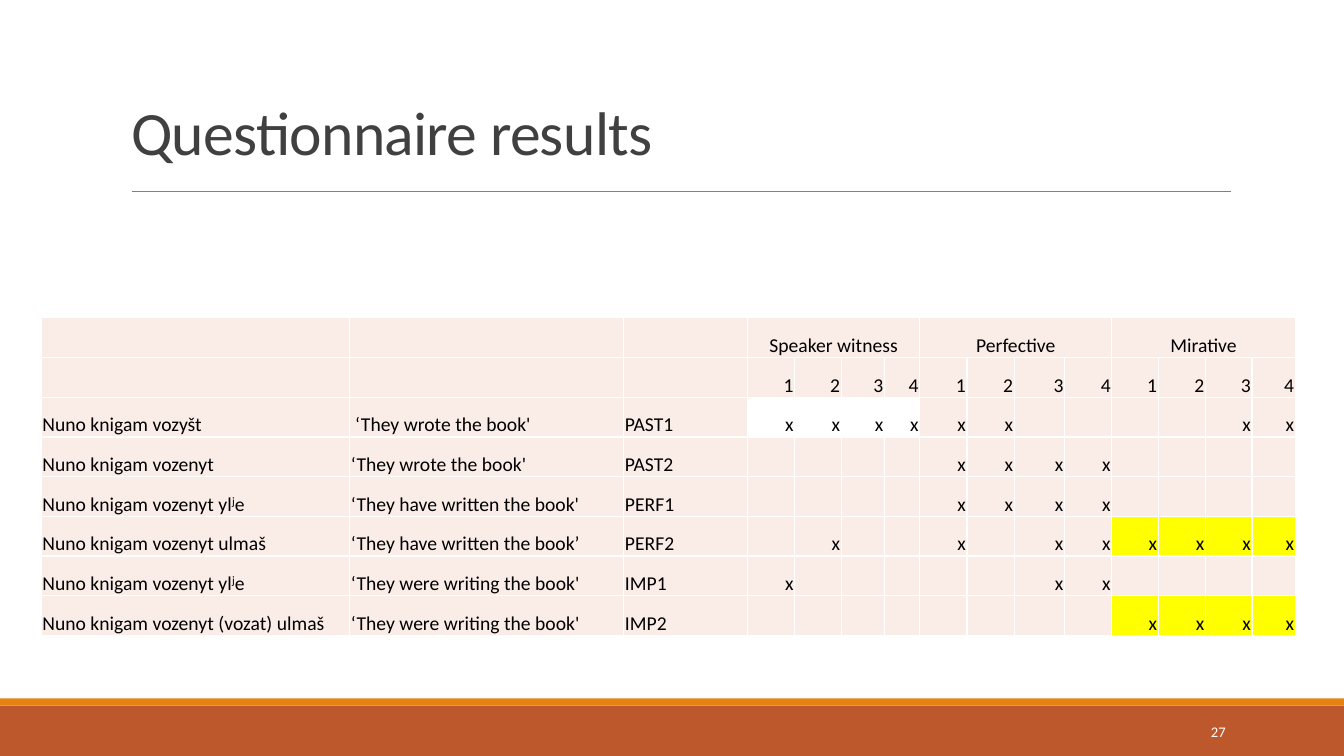
from dataclasses import dataclass

from lxml.etree import SubElement
from pptx import Presentation
from pptx.dml.color import RGBColor
from pptx.enum.shapes import MSO_CONNECTOR, MSO_SHAPE
from pptx.enum.text import MSO_ANCHOR, MSO_AUTO_SIZE, PP_ALIGN
from pptx.oxml.ns import qn
from pptx.util import Cm, Pt


@dataclass(frozen=True)
class Theme:
    font: str = "Calibri"
    title_color: str = "404040"
    text_color: str = "000000"
    white: str = "FFFFFF"
    rule: str = "808080"
    footer: str = "BD582C"
    accent: str = "E48312"
    cell: str = "FAEDE7"
    highlight: str = "FFFF00"
    title_size: float = 44
    table_size: float = 14
    number_size: float = 10.5


THEME = Theme()
SLIDE_WIDTH, SLIDE_HEIGHT = 33.87, 19.05
COLUMN_WIDTHS = [7.77, 6.91, 3.12, 1.19, 1.17, 1.09, 0.89,
                 1.19, 1.19, 1.27, 1.19, 1.17, 1.19, 1.17, 1.09]
ROW_HEIGHT = 1
LABEL_COLUMNS = 3
GROUPS = ["Speaker witness", "Perfective", "Mirative"]
GROUP_SIZE = 4
# Each sentence has one mark per respondent, four for each group; "^" precedes a superscript letter.
SENTENCES = [
    ("Nuno knigam vozyšt", " ‘They wrote the book'", "PAST1", "xxxx xx-- --xx"),
    ("Nuno knigam vozenyt", "‘They wrote the book'", "PAST2", "---- xxxx ----"),
    ("Nuno knigam vozenyt yl^je", "‘They have written the book'", "PERF1", "---- xxxx ----"),
    ("Nuno knigam vozenyt ulmaš", "‘They have written the book’", "PERF2", "-x-- x-xx xxxx"),
    ("Nuno knigam vozenyt yl^je", "‘They were writing the book'", "IMP1", "x--- --xx ----"),
    ("Nuno knigam vozenyt (vozat) ulmaš", "‘They were writing the book'", "IMP2",
     "---- ---- xxxx"),
]
GROUP_FILLS = {("PAST1", 0): THEME.white, ("PERF2", 2): THEME.highlight,
               ("IMP2", 2): THEME.highlight}


def apply_format(target, values):
    for name, value in values.items():
        setattr(target, name, value)


def add_run(paragraph, text, size, color):
    run = paragraph.add_run()
    run.text = text
    apply_format(run.font, {"name": THEME.font, "size": Pt(size)})
    run.font.color.rgb = RGBColor.from_string(color)
    return run


def add_bar(slide, left, top, width, height, color):
    bar = slide.shapes.add_shape(
        MSO_SHAPE.RECTANGLE, Cm(left), Cm(top), Cm(width), Cm(height))
    bar.shadow.inherit = False
    bar.fill.solid()
    bar.fill.fore_color.rgb = RGBColor.from_string(color)
    bar.line.fill.background()


def add_footer(slide, left, top, width, height, number):
    stripe = 0.18
    add_bar(slide, left, top + stripe, width, height - stripe, THEME.footer)
    add_bar(slide, left, top, width, stripe, THEME.accent)
    box = slide.shapes.add_textbox(
        Cm(left + 27.51), Cm(top + 0.33), Cm(3.63), Cm(1.02))
    apply_format(box.text_frame, {"word_wrap": True, "vertical_anchor": MSO_ANCHOR.MIDDLE})
    paragraph = box.text_frame.paragraphs[0]
    paragraph.alignment = PP_ALIGN.RIGHT
    add_run(paragraph, number, THEME.number_size, THEME.white)


def add_title(slide, left, top, width, height, text):
    """Fill the title placeholder and draw the rule below it."""
    title = slide.shapes.title
    apply_format(title, {"left": Cm(left), "top": Cm(top),
                         "width": Cm(width), "height": Cm(height)})
    apply_format(title.text_frame, {"word_wrap": True, "auto_size": MSO_AUTO_SIZE.NONE,
                                    "vertical_anchor": MSO_ANCHOR.BOTTOM})
    paragraph = title.text_frame.paragraphs[0]
    apply_format(paragraph, {"alignment": PP_ALIGN.LEFT, "line_spacing": 0.85})
    run = add_run(paragraph, text, THEME.title_size, THEME.title_color)
    run._r.get_or_add_rPr().set("spc", "-50")

    rule_left, rule_top = left + 0.28, top + height + 0.46
    rule = slide.shapes.add_connector(
        MSO_CONNECTOR.STRAIGHT, Cm(rule_left), Cm(rule_top),
        Cm(rule_left + 27.68), Cm(rule_top))
    rule.line.color.rgb = RGBColor.from_string(THEME.rule)
    rule.line.width = Pt(0.5)
    SubElement(rule._element.spPr, qn("a:effectLst"))


def format_cell(cell, fill):
    apply_format(cell, {"margin_left": Cm(0.03), "margin_right": Cm(0.03),
                        "margin_top": Cm(0.03), "margin_bottom": 0,
                        "vertical_anchor": MSO_ANCHOR.BOTTOM})
    properties = cell._tc.get_or_add_tcPr()
    for side in ("a:lnL", "a:lnR", "a:lnT", "a:lnB"):
        border = SubElement(properties, qn(side), w=str(Pt(1)))
        SubElement(SubElement(border, qn("a:solidFill")), qn("a:srgbClr"), val=THEME.white)
    cell.fill.solid()
    cell.fill.fore_color.rgb = RGBColor.from_string(fill)


def write_cell(cell, text, alignment):
    paragraph = cell.text_frame.paragraphs[0]
    paragraph.alignment = alignment
    before, _, raised = text.partition("^")
    add_run(paragraph, before, THEME.table_size, THEME.text_color)
    if raised:
        superscript = add_run(paragraph, raised[0], THEME.table_size, THEME.text_color)
        superscript._r.get_or_add_rPr().set("baseline", "30000")
        add_run(paragraph, raised[1:], THEME.table_size, THEME.text_color)


def write_header(table):
    for group, name in enumerate(GROUPS):
        first = LABEL_COLUMNS + group * GROUP_SIZE
        table.cell(0, first).merge(table.cell(0, first + GROUP_SIZE - 1))
        write_cell(table.cell(0, first), name, PP_ALIGN.CENTER)
        for offset in range(GROUP_SIZE):
            write_cell(table.cell(1, first + offset), str(offset + 1), PP_ALIGN.RIGHT)


def add_results_table(slide, left, top):
    row_count = len(SENTENCES) + 2
    frame = slide.shapes.add_table(
        row_count, len(COLUMN_WIDTHS), Cm(left), Cm(top),
        Cm(sum(COLUMN_WIDTHS)), Cm(row_count * ROW_HEIGHT))
    table = frame.table
    apply_format(table, {"first_row": False, "horz_banding": False})
    for column, width in zip(table.columns, COLUMN_WIDTHS):
        column.width = Cm(width)
    for row in table.rows:
        row.height = Cm(ROW_HEIGHT)

    for row_index in range(row_count):
        tag = SENTENCES[row_index - 2][2] if row_index >= 2 else None
        for column_index in range(len(COLUMN_WIDTHS)):
            group = (column_index - LABEL_COLUMNS) // GROUP_SIZE
            fill = GROUP_FILLS.get((tag, group), THEME.cell)
            format_cell(table.cell(row_index, column_index), fill)

    write_header(table)
    for row_index, (*labels, marks) in enumerate(SENTENCES, start=2):
        for column_index, label in enumerate(labels):
            write_cell(table.cell(row_index, column_index), label, PP_ALIGN.LEFT)
        for column_index, mark in enumerate(marks.replace(" ", ""), start=LABEL_COLUMNS):
            if mark == "x":
                write_cell(table.cell(row_index, column_index), mark, PP_ALIGN.RIGHT)


def main():
    presentation = Presentation()
    apply_format(presentation, {"slide_width": Cm(SLIDE_WIDTH),
                                "slide_height": Cm(SLIDE_HEIGHT)})
    slide = presentation.slides.add_slide(presentation.slide_layouts.get_by_name("Title Only"))
    add_footer(slide, 0, 17.6, SLIDE_WIDTH, SLIDE_HEIGHT - 17.6, "27")
    add_title(slide, 3.05, 0.79, 27.94, 3.58, "Questionnaire results")
    add_results_table(slide, 1.04, 8.01)
    presentation.save("out.pptx")


if __name__ == "__main__":
    main()
